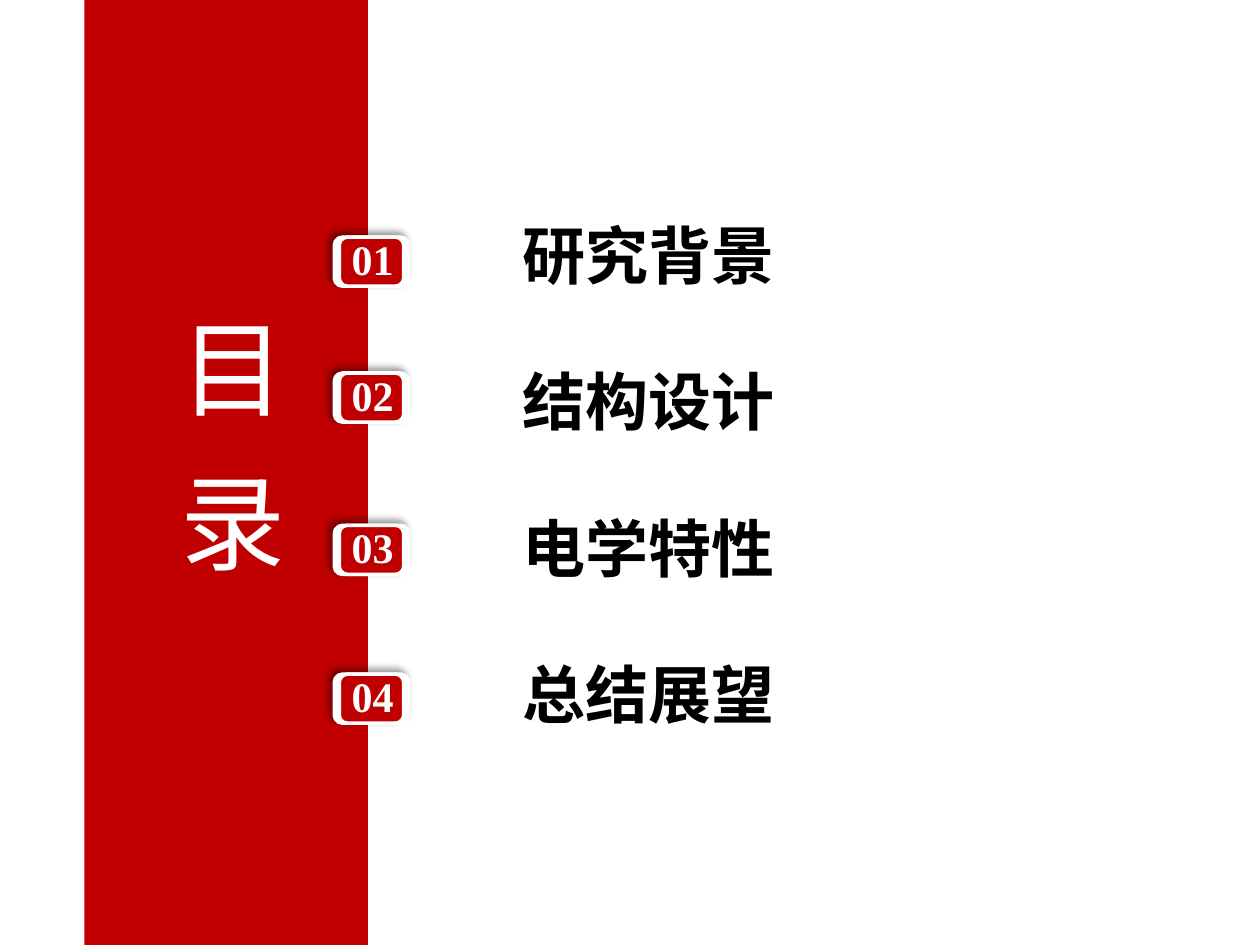
from dataclasses import dataclass

from lxml import etree
from pptx import Presentation
from pptx.dml.color import RGBColor
from pptx.enum.shapes import MSO_SHAPE
from pptx.enum.text import MSO_ANCHOR, MSO_AUTO_SIZE, PP_ALIGN
from pptx.oxml.ns import qn
from pptx.util import Cm, Pt

RECT, ROUND = MSO_SHAPE.RECTANGLE, MSO_SHAPE.ROUNDED_RECTANGLE
TOP, LEFT, GROW = MSO_ANCHOR.TOP, PP_ALIGN.LEFT, MSO_AUTO_SIZE.SHAPE_TO_FIT_TEXT


@dataclass(frozen=True)
class Theme:
    red: RGBColor = RGBColor(0xC0, 0, 0)
    white: RGBColor = RGBColor(255, 255, 255)
    black: RGBColor = RGBColor(0, 0, 0)
    sans: str = "Noto Sans CJK SC"
    serif: str = "Times New Roman"
    title: int = 60
    label: int = 36
    number: int = 24
    edge: int = 2


THEME = Theme()
ITEMS = ["研究背景", "结构设计", "电学特性", "总结展望"]
BADGE_TOPS = [4.78, 7.52, 10.59, 13.59]
LABEL_TOP, LABEL_STEP = 4.24, 2.95


def add_block(slide, kind, box, fill, line=None):
    shape = slide.shapes.add_shape(kind, *map(Cm, box))
    shape.fill.solid()
    shape.fill.fore_color.rgb = fill
    if line is None:
        shape.line.fill.background()
    else:
        shape.line.color.rgb = line
        shape.line.width = Pt(THEME.edge)
    shape.shadow.inherit = False
    return shape


def add_shadow(shape):
    effects = shape.element.spPr.find(qn("a:effectLst"))
    outer = etree.SubElement(effects, qn("a:outerShdw"), blurRad=str(Pt(4)),
                             dist=str(Pt(3)), dir=str(225 * 60000))
    color = etree.SubElement(outer, qn("a:srgbClr"), val=str(THEME.black))
    etree.SubElement(color, qn("a:alpha"), val="40000")


def set_text(shape, text, face, size, color, bold=False):
    frame = shape.text_frame
    frame.text = text
    frame.word_wrap = True
    frame.auto_size = GROW
    frame.vertical_anchor = TOP
    para = frame.paragraphs[0]
    para.alignment = LEFT
    run = para.runs[0]
    font = run.font
    font.name, font.size, font.bold = face, Pt(size), bold
    font.color.rgb = color
    props = run.font.fill and para.runs[0]._r.get_or_add_rPr()
    etree.SubElement(props, qn("a:ea"), typeface=face)
    return props


def add_band(slide, box):
    """Red band with the vertical title on it."""
    x, y, _, _ = box
    add_block(slide, RECT, box, THEME.red)
    title = slide.shapes.title
    title.left, title.top = Cm(x + 1.37), Cm(y + 6.25)
    title.width, title.height = Cm(3.07), Cm(9.27)
    props = set_text(title, "目录", THEME.sans, THEME.title, THEME.white)
    props.set("spc", "2800")  # gap between the two characters
    title.text_frame._txBody.bodyPr.set("vert", "eaVert")
    # The title must lie above the band
    title.element.getparent().append(title.element)


def add_badge(slide, box, number):
    """White tab with a shadow, red face and number."""
    x, y, w, h = box
    add_shadow(add_block(slide, ROUND, box, THEME.white, THEME.white))
    add_block(slide, ROUND, (x + 0.1, y, w - 0.2, h), THEME.red, THEME.white)
    text = slide.shapes.add_textbox(Cm(x + 0.1), Cm(y - 0.2), Cm(1.7), Cm(1.27))
    set_text(text, number, THEME.serif, THEME.number, THEME.white, True)


def add_label(slide, box, text):
    label = slide.shapes.add_textbox(*map(Cm, box))
    set_text(label, text, THEME.sans, THEME.label, THEME.black, True)


def main():
    deck = Presentation()
    deck.slide_width, deck.slide_height = Cm(25.4), Cm(19.05)
    slide = deck.slides.add_slide(deck.slide_layouts[5])

    add_band(slide, (1.7, 0, 5.72, 19.07))
    # Contents rows
    for i, (item, top) in enumerate(zip(ITEMS, BADGE_TOPS)):
        add_badge(slide, (6.74, top, 1.5, 0.99), f"{i + 1:02}")
        add_label(slide, (10.29, LABEL_TOP + i * LABEL_STEP, 7.67, 1.8), item)
    deck.save("out.pptx")


if __name__ == "__main__":
    main()
